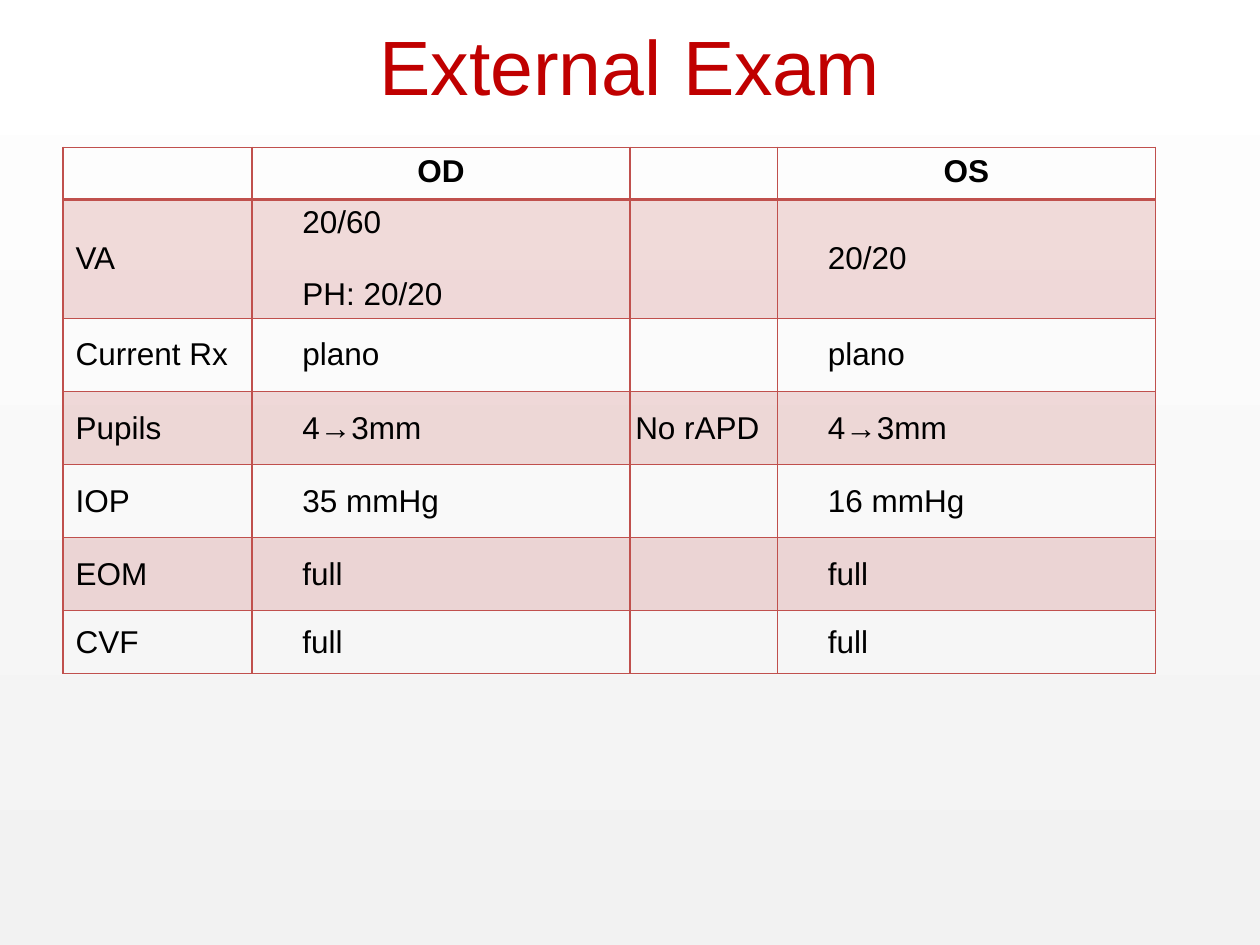
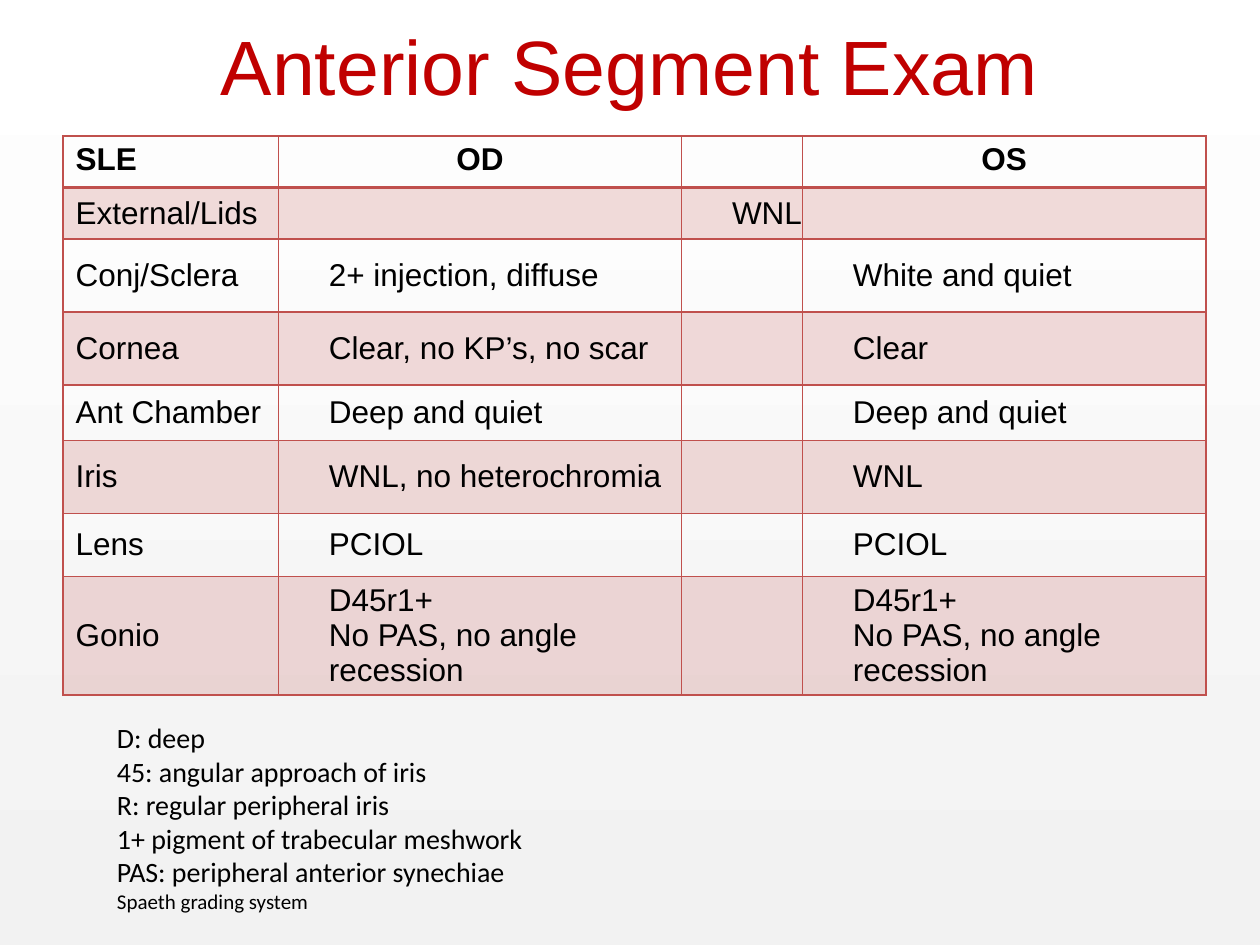
from lxml import etree
from pptx import Presentation
from pptx.dml.color import RGBColor
from pptx.enum.text import MSO_ANCHOR, MSO_AUTO_SIZE, PP_ALIGN
from pptx.oxml.ns import qn
from pptx.util import Inches, Pt

COLORS = {"title": "C00000", "text": "000000", "accent": "C0504D",
          "bottom": "F2F2F2", "top": "FFFFFF"}
BAND_ALPHA = 20000
LINE_GAP = Pt(20.7)  # one line of 18 pt text

# Each row: label, right eye (OD), middle, left eye (OS)
EXAMS = [
    {
        "title": "External Exam",
        "at": (0.5, 1.17),
        "columns": [1.5, 3, 1.17, 3],
        "heights": [0.41, 0.59, 0.58, 0.58, 0.58, 0.58, 0.5],
        "middle": (0, 0.1, PP_ALIGN.CENTER),
        "paragraph_gap": LINE_GAP,
        "rows": [
            ("", "OD", "", "OS"),
            ("VA", "20/60\nPH: 20/20", "", "20/20"),
            ("Current Rx", "plano", "", "plano"),
            ("Pupils", "4→3mm", "No rAPD", "4→3mm"),
            ("IOP", "35 mmHg", "", "16 mmHg"),
            ("EOM", "full", "", "full"),
            ("CVF", "full", "", "full"),
        ],
    },
    {
        "title": "Anterior Segment Exam",
        "at": (0.5, 1.08),
        "columns": [1.71, 3.2, 0.96, 3.2],
        "heights": [0.41, 0.34, 0.58, 0.58, 0.44, 0.58, 0.5, 0.5],
        "middle": (0.4, 0, PP_ALIGN.LEFT),
        "paragraph_gap": Pt(0),
        "rows": [
            ("SLE", "OD", "", "OS"),
            ("External/Lids", "", "WNL", ""),
            ("Conj/Sclera", "2+ injection, diffuse", "", "White and quiet"),
            ("Cornea", "Clear, no KP’s, no scar", "", "Clear"),
            ("Ant Chamber", "Deep and quiet", "", "Deep and quiet"),
            ("Iris", "WNL, no heterochromia", "", "WNL"),
            ("Lens", "PCIOL", "", "PCIOL"),
            ("Gonio", "D45r1+\nNo PAS, no angle recession", "",
             "D45r1+\nNo PAS, no angle recession"),
        ],
    },
]

GONIO_KEY = [
    ("D: deep", 16),
    ("45: angular approach of iris", 16),
    ("R: regular peripheral iris", 16),
    ("1+ pigment of trabecular meshwork", 16),
    ("PAS: peripheral anterior synechiae", 16),
    ("Spaeth grading system", 12),
]


def write(paragraph, text, size, color="text", font="Arial", bold=False):
    run = paragraph.add_run()
    run.text = text
    run.font.name = font
    run.font.size = Pt(size)
    run.font.bold = bold
    run.font.color.rgb = RGBColor.from_string(COLORS[color])


def style_cell(cell, row):
    """Borders first, then the band fill, as the schema orders them."""
    properties = cell._tc.get_or_add_tcPr()
    widths = {"lnL": 1, "lnR": 1, "lnT": 2 if row == 1 else 1,
              "lnB": 2 if row == 0 else 1}
    for side, width in widths.items():
        line = etree.SubElement(properties, qn(f"a:{side}"), w=str(Pt(width)))
        fill = etree.SubElement(line, qn("a:solidFill"))
        etree.SubElement(fill, qn("a:srgbClr"), val=COLORS["accent"])
    if row % 2:
        cell.fill.solid()
        cell.fill.fore_color.rgb = RGBColor.from_string(COLORS["accent"])
        shade = properties.find(qn("a:solidFill")).find(qn("a:srgbClr"))
        etree.SubElement(shade, qn("a:alpha"), val=str(BAND_ALPHA))
    else:
        cell.fill.background()


prs = Presentation()
prs.slide_width, prs.slide_height = Inches(10), Inches(7.5)

# Shared background: grey at the foot, white at the top
backdrop = prs.slide_master.background.fill
backdrop.gradient()
backdrop.gradient_angle = 90
for stop, position, shade in zip(backdrop.gradient_stops, (0, 1), ("bottom", "top")):
    stop.position = position
    stop.color.rgb = RGBColor.from_string(COLORS[shade])

for exam in EXAMS:
    slide = prs.slides.add_slide(prs.slide_layouts[5])

    # Title
    title = slide.shapes.title
    title.left, title.top = Inches(0.5), Inches(-0.11)
    title.width, title.height = Inches(9), Inches(1.25)
    title.text_frame.vertical_anchor = MSO_ANCHOR.MIDDLE
    heading = title.text_frame.paragraphs[0]
    heading.alignment = PP_ALIGN.CENTER
    write(heading, exam["title"], 44, "title")

    # Findings table
    left, top = exam["at"]
    findings = slide.shapes.add_table(
        len(exam["rows"]), len(exam["columns"]), Inches(left), Inches(top),
        Inches(sum(exam["columns"])), Inches(sum(exam["heights"]))).table
    for column, width in zip(findings.columns, exam["columns"]):
        column.width = Inches(width)
    for table_row, height in zip(findings.rows, exam["heights"]):
        table_row.height = Inches(height)

    for r, entries in enumerate(exam["rows"]):
        for c, entry in enumerate(entries):
            cell = findings.cell(r, c)
            style_cell(cell, r)
            if not entry:
                continue
            margin_left, margin_right, alignment = 0.1, 0.1, PP_ALIGN.LEFT
            if r == 0:
                alignment = PP_ALIGN.CENTER if c else PP_ALIGN.LEFT
            elif c == 2:
                margin_left, margin_right, alignment = exam["middle"]
            elif c:
                margin_left = 0.4
            cell.margin_left, cell.margin_right = Inches(margin_left), Inches(margin_right)
            cell.vertical_anchor = MSO_ANCHOR.MIDDLE if r else MSO_ANCHOR.TOP
            for i, text in enumerate(entry.split("\n")):
                frame = cell.text_frame
                paragraph = frame.add_paragraph() if i else frame.paragraphs[0]
                paragraph.alignment = alignment
                if i:
                    paragraph.space_before = exam["paragraph_gap"]
                write(paragraph, text, 18, bold=r == 0)

# Key to the gonioscopy grading, on the last slide
gonio_key = slide.shapes.add_textbox(
    Inches(0.83), Inches(5.67), Inches(4.17), Inches(1.65)).text_frame
gonio_key.word_wrap = True
gonio_key.auto_size = MSO_AUTO_SIZE.SHAPE_TO_FIT_TEXT
for i, (text, size) in enumerate(GONIO_KEY):
    paragraph = gonio_key.add_paragraph() if i else gonio_key.paragraphs[0]
    write(paragraph, text, size, font="Calibri")

prs.save("out.pptx")
